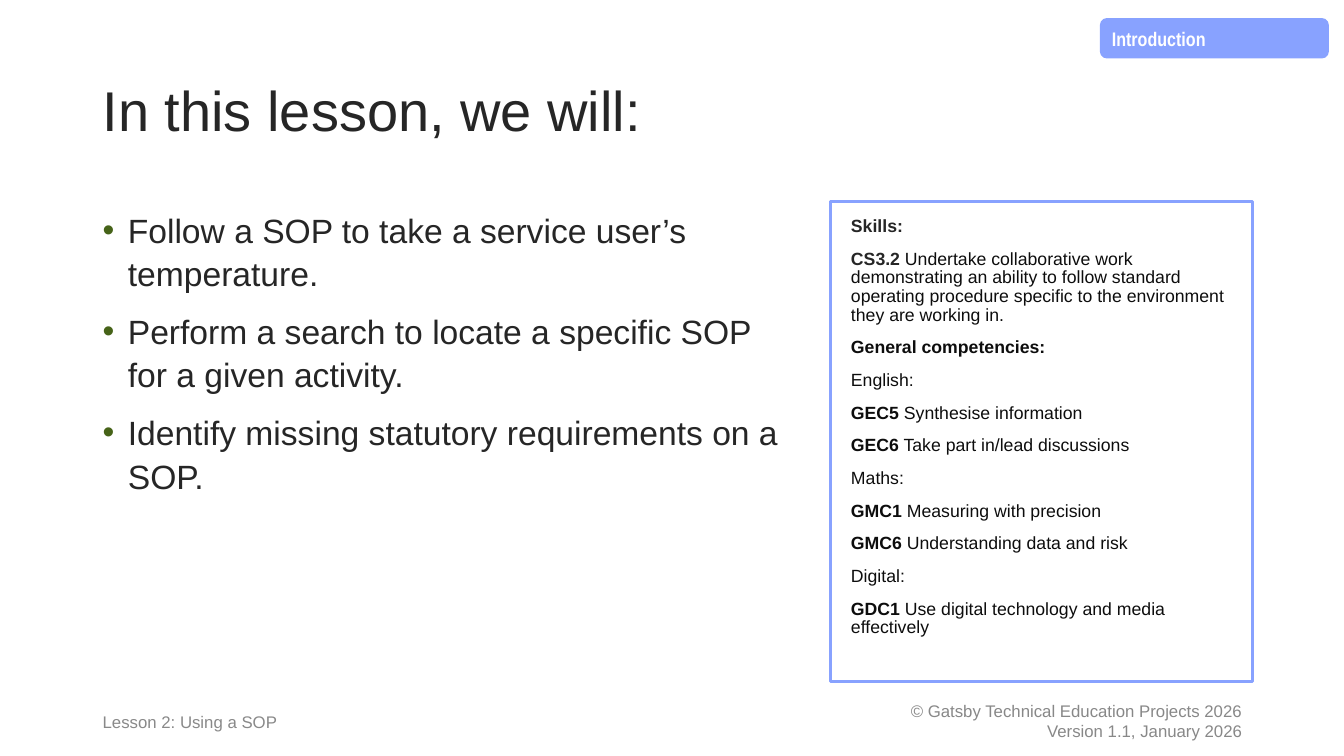
from pptx import Presentation
from pptx.dml.color import RGBColor
from pptx.enum.shapes import MSO_SHAPE
from pptx.enum.text import MSO_ANCHOR, PP_ALIGN
from pptx.oxml.ns import qn
from pptx.util import Inches, Pt
from lxml import etree

TAG_SHAPE = MSO_SHAPE.FLOWCHART_ALTERNATE_PROCESS
RECTANGLE = MSO_SHAPE.RECTANGLE
TOP, MIDDLE = MSO_ANCHOR.TOP, MSO_ANCHOR.MIDDLE
LEFT, RIGHT = PP_ALIGN.LEFT, PP_ALIGN.RIGHT

PERIWINKLE, WHITE, GREEN = "88A2FF", "FFFFFF", "466318"
DARK, NEAR_BLACK = "262626", "0D0D0D"

GOALS = [
    "Follow a SOP to take a service user’s temperature.",
    "Perform a search to locate a specific SOP for a given activity.",
    "Identify missing statutory requirements on a SOP.",
]

# Each entry: bold part, regular part, colour of the bold part
SKILLS = [
    ("Skills:", "", DARK),
    ("CS3.2 ", "Undertake collaborative work demonstrating an ability to follow "
     "standard operating procedure specific to the environment they are working in.", DARK),
    ("General competencies:", "", NEAR_BLACK),
    ("", "English:", NEAR_BLACK),
    ("GEC5", " Synthesise information", NEAR_BLACK),
    ("GEC6", " Take part in/lead discussions", NEAR_BLACK),
    ("", "Maths:", NEAR_BLACK),
    ("GMC1", " Measuring with precision", NEAR_BLACK),
    ("GMC6", " Understanding data and risk", NEAR_BLACK),
    ("", "Digital:", NEAR_BLACK),
    ("GDC1", " Use digital technology and media effectively", NEAR_BLACK),
]


def color(value):
    return RGBColor.from_string(value)


def set_frame(shape, anchor=TOP, inset_x=0.1, inset_y=0.05):
    frame = shape.text_frame
    frame.word_wrap = True
    frame.vertical_anchor = anchor
    frame.margin_left = frame.margin_right = Inches(inset_x)
    frame.margin_top = frame.margin_bottom = Inches(inset_y)
    return frame


def add_text_box(slide, left, top, width, height, anchor=TOP):
    box = slide.shapes.add_textbox(Inches(left), Inches(top), Inches(width), Inches(height))
    return set_frame(box, anchor)


def add_panel(slide, kind, left, top, width, height, fill, line=None):
    shape = slide.shapes.add_shape(kind, Inches(left), Inches(top), Inches(width), Inches(height))
    shape.shadow.inherit = False
    shape.fill.solid()
    shape.fill.fore_color.rgb = color(fill)
    if line:
        shape.line.color.rgb = color(line)
        shape.line.width = Pt(2.25)
    else:
        shape.line.fill.background()
    return shape


def add_paragraph(frame, first, spacing=1.0, before=0, align=LEFT):
    paragraph = frame.paragraphs[0] if first else frame.add_paragraph()
    paragraph.alignment = align
    paragraph.line_spacing = spacing
    paragraph.space_before = Pt(0 if first else before)
    return paragraph


def add_run(paragraph, text, size, value, bold=False, font="Arial"):
    run = paragraph.add_run()
    run.text = text
    run.font.name = font
    run.font.size = Pt(size)
    run.font.bold = bold
    run.font.color.rgb = color(value)


def add_bullet(paragraph):
    properties = paragraph._p.get_or_add_pPr()
    properties.set("marL", str(Inches(0.25)))
    properties.set("indent", str(Inches(-0.25)))
    bullet_color = etree.SubElement(properties, qn("a:buClr"))
    etree.SubElement(bullet_color, qn("a:srgbClr")).set("val", GREEN)
    etree.SubElement(properties, qn("a:buFont")).set("typeface", "Arial")
    etree.SubElement(properties, qn("a:buChar")).set("char", "•")


def main():
    presentation = Presentation()
    presentation.slide_width = Inches(13.33)
    presentation.slide_height = Inches(7.5)
    slide = presentation.slides.add_slide(presentation.slide_layouts[6])

    # Section tag
    tag = set_frame(add_panel(slide, TAG_SHAPE, 10.91, 0.18, 2.27, 0.4, PERIWINKLE))
    add_run(add_paragraph(tag, True, 1.08), "Introduction", 14, WHITE, True, "Arial Narrow")

    # Title
    title = add_text_box(slide, 0.92, 0.4, 11.5, 1.45, MIDDLE)
    add_run(add_paragraph(title, True, 0.9), "In this lesson, we will:", 40, DARK)

    # Lesson goals
    goals = add_text_box(slide, 0.92, 2, 7, 4.76)
    for index, goal in enumerate(GOALS):
        paragraph = add_paragraph(goals, index == 0, 1.08, 10)
        add_bullet(paragraph)
        add_run(paragraph, goal, 24, DARK)

    # Skills panel
    panel = add_panel(slide, RECTANGLE, 8.24, 2, 4.18, 4.76, WHITE, PERIWINKLE)
    skills = set_frame(panel, TOP, 0.2, 0.16)
    for index, (code, description, code_color) in enumerate(SKILLS):
        paragraph = add_paragraph(skills, index == 0, 0.88, 10)
        if code:
            add_run(paragraph, code, 12.6, code_color, True)
        if description:
            add_run(paragraph, description, 12.6, NEAR_BLACK)

    # Footer
    lesson = add_text_box(slide, 0.92, 6.95, 4.6, 0.4, MIDDLE)
    add_run(add_paragraph(lesson, True, 1.08), "Lesson 2: Using a SOP", 12, "898989")
    rights = add_text_box(slide, 7.92, 6.95, 4.5, 0.4, MIDDLE)
    lines = ["© Gatsby Technical Education Projects 2026", "Version 1.1, January 2026"]
    for index, line in enumerate(lines):
        add_run(add_paragraph(rights, index == 0, align=RIGHT), line, 12, "888888")

    presentation.save("out.pptx")


if __name__ == "__main__":
    main()
